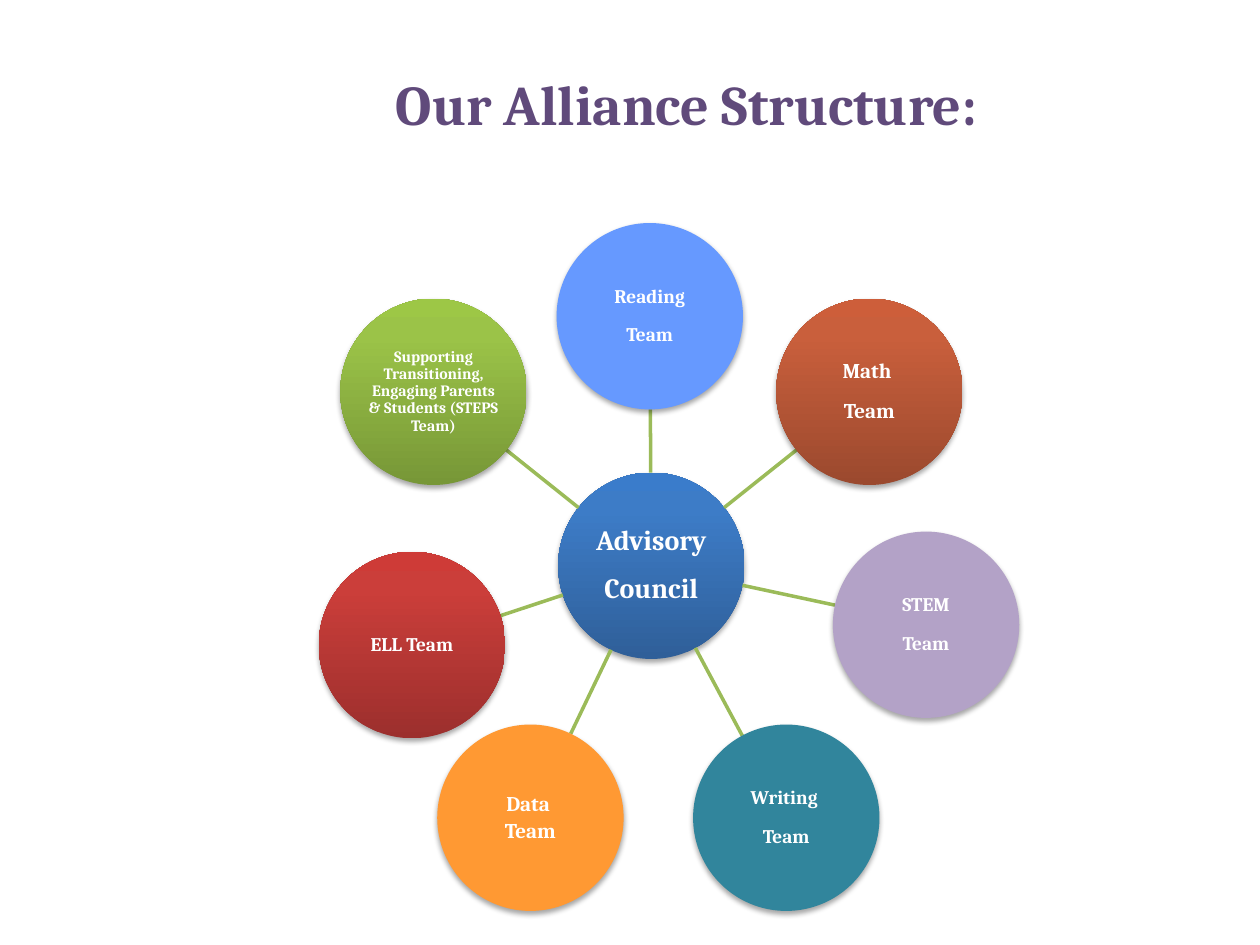
import copy
import math

import lxml.etree
import pptx
import pptx.dml.color
import pptx.enum.dml
import pptx.enum.shapes
import pptx.enum.text
import pptx.oxml.ns
import pptx.util

Pt = pptx.util.Pt
RGB = pptx.dml.color.RGBColor.from_string
qn = pptx.oxml.ns.qn

TITLE = "Our Alliance Structure: "
HUB = dict(lines=["Advisory", "Council"], center=(372.2, 323.3), size="hub",
           fill=["2F5F99", "3D7CC7", "3A7CCB"])
TEAMS = [
    dict(lines=["ELL Team"], center=(235.4, 368.6), size="team", fill=["9C2F2D", "CB3E3A", "CE3B37"]),
    dict(lines=["Math ", "Team"], center=(496.8, 223.9), size="large", fill=["9B492E", "C95F3C", "CD5E3A"]),
    dict(lines=["STEM", "Team"], center=(529.2, 357), size="team", fill=["B3A2C7"]),
    dict(lines=["Writing ", "Team"], center=(449.3, 467.3), size="team", fill=["31859C"]),
    dict(lines=["Data ", "Team"], center=(303.1, 467.3), size="large", fill=["FF9933"], gap=2.5),
    dict(lines=["Reading", "Team"], center=(371.3, 180.7), size="team", fill=["6699FF"]),
    dict(lines=["Supporting Transitioning, Engaging Parents & Students (STEPS Team)"],
         center=(247.7, 223.9), size="small", fill=["779737", "9BC348", "9DC746"]),
]
THEME = dict(font="Cambria", title="604A7B", text="FFFFFF", spoke="9BBB59", shadow="000000",
             sizes=dict(title=32, hub=16, large=12, team=11, small=9))
DIAMETER = 106.5
STOPS = [0, 0.8, 1]


def write(tf, lines, size, color, gap=0, spacing=1.0):
    tf.text = "\n".join(lines)
    tf.word_wrap = True
    for p in tf.paragraphs:
        p.alignment = pptx.enum.text.PP_ALIGN.CENTER
        p.space_after = Pt(gap)
        p.line_spacing = spacing
        for r in p.runs:
            r.font.name = THEME["font"]
            r.font.size = Pt(THEME["sizes"][size])
            r.font.bold = True
            r.font.color.rgb = RGB(color)


def paint(s, colors):
    if len(colors) == 1:
        s.fill.solid()
        s.fill.fore_color.rgb = RGB(colors[0])
        return
    s.fill.gradient()
    s.fill.gradient_angle = 90
    stops = s._element.spPr.find(".//" + qn("a:gsLst"))
    stops.append(copy.deepcopy(stops[-1]))
    for stop, color, position in zip(s.fill.gradient_stops, colors, STOPS):
        stop.color.rgb = RGB(color)
        stop.position = position


def add_shadow(s):
    s.shadow.inherit = False
    effects = s._element.spPr.find(qn("a:effectLst"))
    outer = lxml.etree.SubElement(effects, qn("a:outerShdw"), blurRad=str(Pt(3.1)),
                                  dist=str(Pt(1.8)), dir="5400000", rotWithShape="0")
    color = lxml.etree.SubElement(outer, qn("a:srgbClr"), val=THEME["shadow"])
    lxml.etree.SubElement(color, qn("a:alpha"), val="35000")


def add_circle(shapes, node):
    x, y = node["center"]
    s = shapes.add_shape(pptx.enum.shapes.MSO_SHAPE.OVAL, Pt(x - DIAMETER / 2),
                         Pt(y - DIAMETER / 2), Pt(DIAMETER), Pt(DIAMETER))
    paint(s, node["fill"])
    s.line.fill.background()
    add_shadow(s)
    tf = s.text_frame
    tf.margin_left = tf.margin_right = tf.margin_top = tf.margin_bottom = Pt(0.7)
    tf.vertical_anchor = pptx.enum.text.MSO_ANCHOR.MIDDLE
    write(tf, node["lines"], node["size"], THEME["text"], node.get("gap", 10), 0.9)


def add_spoke(shapes, start, end):
    dx, dy = end[0] - start[0], end[1] - start[1]
    trim = DIAMETER / 2 / math.hypot(dx, dy)
    points = [Pt(a + d * t) for t in (trim, 1 - trim) for a, d in zip(start, (dx, dy))]
    s = shapes.add_connector(pptx.enum.shapes.MSO_CONNECTOR.STRAIGHT, *points)
    s.line.color.rgb = RGB(THEME["spoke"])
    s.line.width = Pt(2)
    lxml.etree.SubElement(s._element.spPr, qn("a:effectLst"))


def main():
    prs = pptx.Presentation()
    prs.slide_width, prs.slide_height = Pt(720), Pt(540)
    shapes = prs.slides.add_slide(prs.slide_layouts[6]).shapes
    title = shapes.add_textbox(Pt(84), Pt(36), Pt(624), Pt(60))
    write(title.text_frame, [TITLE], "title", THEME["title"])
    add_circle(shapes, HUB)
    for team in TEAMS:
        add_spoke(shapes, HUB["center"], team["center"])
        add_circle(shapes, team)
    prs.save("out.pptx")


if __name__ == "__main__":
    main()
